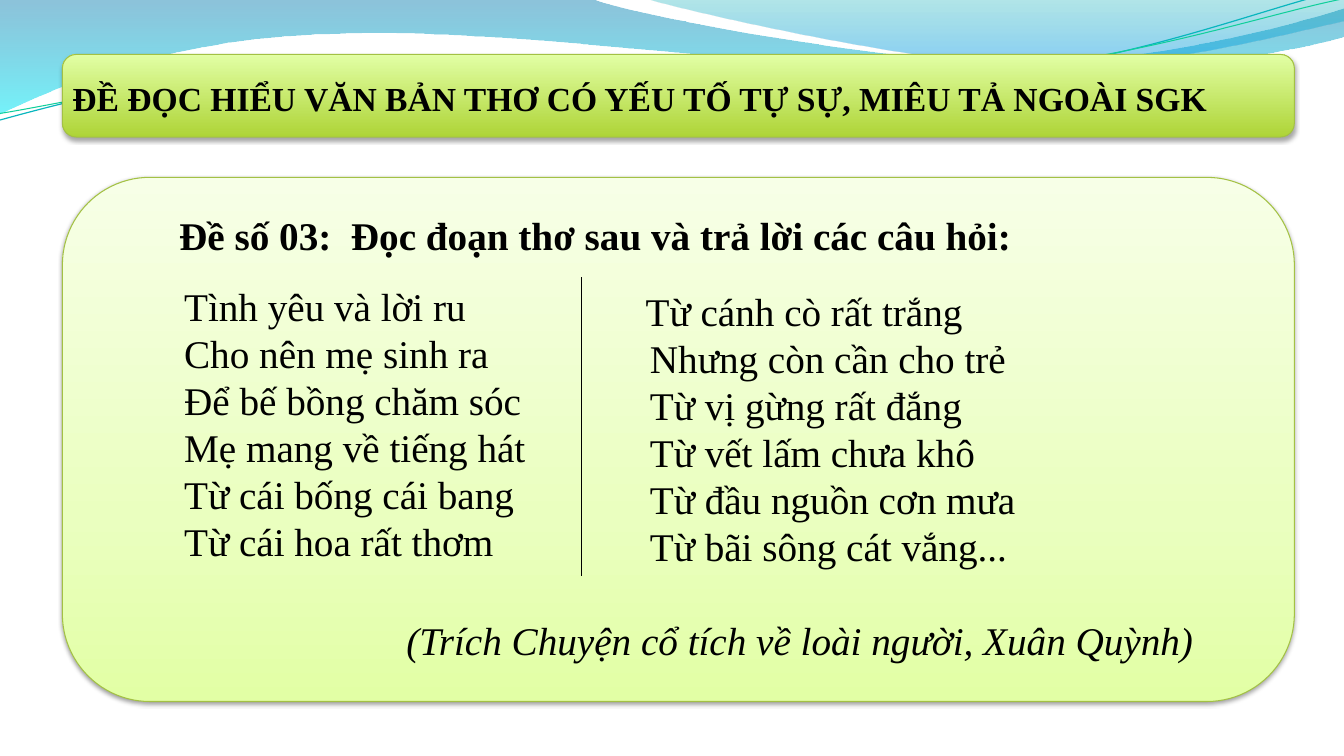
from lxml import etree
from pptx import Presentation
from pptx.dml.color import RGBColor
from pptx.enum.shapes import MSO_CONNECTOR, MSO_SHAPE
from pptx.enum.text import PP_ALIGN
from pptx.oxml import parse_xml
from pptx.oxml.ns import nsdecls, qn
from pptx.util import Pt

ROUNDED, STRAIGHT = MSO_SHAPE.ROUNDED_RECTANGLE, MSO_CONNECTOR.STRAIGHT
LEFT, CENTER, JUSTIFY = PP_ALIGN.LEFT, PP_ALIGN.CENTER, PP_ALIGN.JUSTIFY

FONT = "Times New Roman"
COLORS = {
    "text": "000000", "border": "A3C144",
    "lime": "AED437", "lime_light": "E2FFA5", "lime_pale": "EAFFBF", "lime_white": "F7FFE7",
    "navy": "0079AD", "cyan": "00E9F7", "teal": "00ABB4", "sky": "0099E4",
    "strand_teal": "09B6BE", "strand_green": "10CF9B",
}

# Outlines in points: a pair is a straight step, six numbers are a cubic curve
WAVES = [
    ([(-1, -1), (422.5, -1), (456.5, 12, 637, 45, 728, 45), (819, 45, 920, 19, 960, 6.5),
      (961, 26), (944, 32, 835, 55, 716, 54), (597, 54, 366, 20, 247, 24.5),
      (124, 26, 44, 60, -1, 81.5)],
     [(0, "navy", 45), (100, "cyan", 55)]),
    ([(460, -1), (489, 8, 654.5, 44.6, 738, 47), (821.5, 49.7, 922.5, 23, 960, 15), (960, 0)],
     [(0, "teal", 30), (80, "sky", 45), (100, "sky", 45)]),
]
STRANDS = [
    ([(-1, 85.7), (46, 72.7, 152, 44.6, 265.7, 39.6), (379.4, 34.6, 568.8, 62.6, 684, 54.7),
      (799.2, 47.5, 901.4, 5.8, 958.3, -7.2)], "strand_teal", 0.85),
    ([(0, 80.6), (45.4, 74.2, 157, 47.5, 272.2, 42.5), (386.6, 38.2, 573.1, 59, 687.6, 51.8),
      (802.8, 44.6, 903.6, 10, 960.5, -1.4)], "strand_green", 0.75),
]

TITLE = "ĐỀ ĐỌC HIỂU VĂN BẢN THƠ CÓ YẾU TỐ TỰ SỰ, MIÊU TẢ NGOÀI SGK"
HEADING = "Đề số 03:  Đọc đoạn thơ sau và trả lời các câu hỏi:"
VERSE_LEFT = ["Tình yêu và lời ru", "Cho nên mẹ sinh ra", "Để bế bồng chăm sóc",
              "Mẹ mang về tiếng hát", "Từ cái bống cái bang", "Từ cái hoa rất thơm"]
VERSE_RIGHT = ["Từ cánh cò rất trắng", "Nhưng còn cần cho trẻ", "Từ vị gừng rất đắng",
               "Từ vết lấm chưa khô", "Từ đầu nguồn cơn mưa", "Từ bãi sông cát vắng..."]
CREDIT = "(Trích Chuyện cổ tích về loài người, Xuân Quỳnh)"

HEADING_SPACING = {"alignment": JUSTIFY, "line_spacing": 1.15, "space_after": Pt(10)}
VERSE_FONT = {"size": Pt(28)}


def rgb(name):
    return RGBColor.from_string(COLORS[name])


def set_gradient(sp, stops, angle):
    gs = "".join(
        f'<a:gs pos="{pos * 1000}"><a:srgbClr val="{COLORS[name]}">'
        f'<a:alpha val="{alpha * 1000}"/></a:srgbClr></a:gs>' for pos, name, alpha in stops)
    sp.fill.background()
    spPr = sp._element.spPr
    spPr.replace(spPr.find(qn("a:noFill")), parse_xml(
        f'<a:gradFill {nsdecls("a")} rotWithShape="1"><a:gsLst>{gs}</a:gsLst>'
        f'<a:lin ang="{angle * 60000}" scaled="0"/></a:gradFill>'))


def set_shadow(sp, alpha, blur, dist):
    sp.shadow.inherit = False
    effects = sp._element.spPr.find(qn("a:effectLst"))
    effects.append(parse_xml(
        f'<a:outerShdw {nsdecls("a")} blurRad="{Pt(blur)}" dist="{Pt(dist)}" dir="5400000" '
        f'rotWithShape="0"><a:srgbClr val="000000"><a:alpha val="{alpha * 1000}"/>'
        f'</a:srgbClr></a:outerShdw>'))


def add_outline(slide, outline, close):
    steps = [list(zip(part[::2], part[1::2])) for part in outline]
    builder = slide.shapes.build_freeform(*outline[0], scale=Pt(1))
    builder.add_line_segments([point for step in steps[1:] for point in step], close=close)
    sp = builder.convert_to_shape()
    sp.shadow.inherit = False
    # Join the three points of each curve into one Bézier step
    segments = iter(list(sp._element.spPr.iter(qn("a:lnTo"))))
    for step in steps[1:]:
        first, *others = [next(segments) for _ in step]
        if others:
            first.tag = qn("a:cubicBezTo")
            for segment in others:
                first.append(segment[0])
                segment.getparent().remove(segment)
    return sp


def add_text(slide, box, paragraphs):
    """Each paragraph is (lines, font values, paragraph values, left indent)."""
    tf = slide.shapes.add_textbox(*map(Pt, box)).text_frame
    tf.word_wrap = True
    for i, (lines, font, para, indent) in enumerate(paragraphs):
        p = tf.paragraphs[0] if i == 0 else tf.add_paragraph()
        for key, value in para.items():
            setattr(p, key, value)
        if indent:
            p._p.get_or_add_pPr().set("marL", str(Pt(indent)))
        for j, line in enumerate(lines):
            if j:
                p.add_line_break()
            r = p.add_run()
            r.text = line
            r.font.color.rgb = rgb("text")
            for key, value in {"name": FONT, **font}.items():
                setattr(r.font, key, value)


def add_panel(slide, box, stops, shadow):
    sp = slide.shapes.add_shape(ROUNDED, *map(Pt, box))
    sp.adjustments[0] = 0.167
    set_gradient(sp, stops, 270)
    sp.line.color.rgb = rgb("border")
    sp.line.width = Pt(0.75)
    set_shadow(sp, *shadow)


def wave_header(slide):
    for outline, stops in WAVES:
        sp = add_outline(slide, outline, True)
        set_gradient(sp, stops, 90)
        sp.line.fill.background()
    for outline, color, width in STRANDS:
        sp = add_outline(slide, outline, False)
        sp.fill.background()
        sp.line.color.rgb = rgb(color)
        sp.line.width = Pt(width)


def title_bar(slide, box):
    x, y, w, h = box
    add_panel(slide, box, [(0, "lime", 100), (100, "lime_light", 100)], (35, 3.1, 1.8))
    add_text(slide, (x, y + 8.6, w - 9.5, 39),
             [([TITLE], {"size": Pt(24), "bold": True}, HEADING_SPACING, 0)])


def poem_panel(slide, box):
    x, y, w, h = box
    add_panel(slide, box, [(0, "lime_light", 100), (35, "lime_pale", 100),
                           (100, "lime_white", 100)], (38, 3.1, 1.6))
    add_text(slide, (x + 76.3, y + 16, 804, 44),
             [([HEADING], {"size": Pt(28), "bold": True}, HEADING_SPACING, 0)])
    # Right column of verse, with the source of the poem below it
    verse = {"alignment": LEFT}
    add_text(slide, (x + 203.1, y + 74.9, 626.4, 278.6), [
        (VERSE_RIGHT[:1], VERSE_FONT, verse, 206.5),
        (VERSE_RIGHT[1:], VERSE_FONT, verse, 209.5),
        ([CREDIT], {**VERSE_FONT, "italic": True},
         {"alignment": CENTER, "space_before": Pt(33.6)}, 20.7)])
    # Left column of verse
    add_text(slide, (x - 44.6, y + 71.3, 460.8, 278.6), [(VERSE_LEFT, VERSE_FONT, verse, 124.5)])
    # Divider between the columns
    ln = slide.shapes.add_connector(STRAIGHT, Pt(x + 370.8), Pt(y + 71.3),
                                    Pt(x + 370.8), Pt(y + 284.4))
    ln.line.color.rgb = rgb("text")
    ln.line.width = Pt(0.75)
    etree.SubElement(ln._element.spPr, qn("a:effectLst"))


def main():
    prs = Presentation()
    prs.slide_width, prs.slide_height = Pt(960), Pt(540)
    slide = prs.slides.add_slide(prs.slide_layouts[6])
    wave_header(slide)
    title_bar(slide, (44.6, 38.9, 880, 59))
    poem_panel(slide, (44.6, 126.7, 880, 374.4))
    prs.save("out.pptx")


if __name__ == "__main__":
    main()
